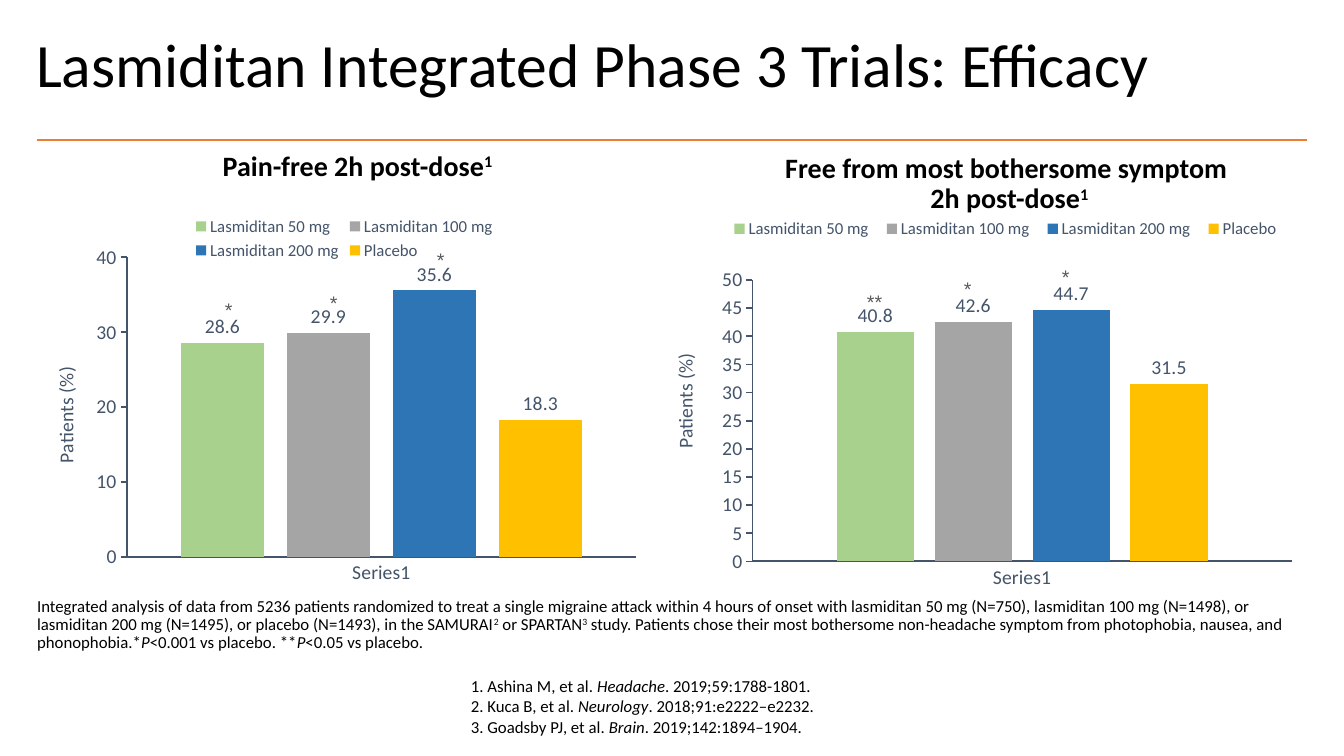
from lxml import etree
from pptx import Presentation
from pptx.chart.data import CategoryChartData
from pptx.dml.color import RGBColor
from pptx.enum.chart import XL_CHART_TYPE, XL_LABEL_POSITION, XL_LEGEND_POSITION, XL_TICK_MARK
from pptx.enum.shapes import MSO_CONNECTOR
from pptx.enum.text import MSO_ANCHOR, MSO_AUTO_SIZE, PP_ALIGN
from pptx.oxml.ns import qn
from pptx.util import Pt

PX = 914400 / 100.8
COLUMNS = XL_CHART_TYPE.COLUMN_CLUSTERED
OUTSIDE_END = XL_LABEL_POSITION.OUTSIDE_END
LEGEND_TOP = XL_LEGEND_POSITION.TOP
TICK_NONE, TICK_OUT = XL_TICK_MARK.NONE, XL_TICK_MARK.OUTSIDE
STRAIGHT = MSO_CONNECTOR.STRAIGHT
TOP, MIDDLE, BOTTOM = MSO_ANCHOR.TOP, MSO_ANCHOR.MIDDLE, MSO_ANCHOR.BOTTOM
LEFT, CENTER = PP_ALIGN.LEFT, PP_ALIGN.CENTER
NO_AUTOFIT = MSO_AUTO_SIZE.NONE

BLACK = RGBColor(0x00, 0x00, 0x00)
SLATE = RGBColor(0x44, 0x54, 0x6A)
STAR_GRAY = RGBColor(0x58, 0x59, 0x5B)
ORANGE = RGBColor(0xED, 0x7D, 0x31)
GREEN = RGBColor(0xA9, 0xD1, 0x8E)
GRAY = RGBColor(0xA5, 0xA5, 0xA5)
BLUE = RGBColor(0x2E, 0x75, 0xB6)
GOLD = RGBColor(0xFF, 0xC0, 0x00)

ARMS = [("Lasmiditan 50 mg", GREEN), ("Lasmiditan 100 mg", GRAY),
        ("Lasmiditan 200 mg", BLUE), ("Placebo", GOLD)]
PAIN_FREE = [28.6, 29.9, 35.6, 18.3]
SYMPTOM_FREE = [40.8, 42.6, 44.7, 31.5]
STARS = [("*", 215, 293), ("*", 320, 286), ("*", 427, 243),
         ("**", 857, 285), ("*", 954, 272), ("*", 1052, 260)]
PAIN_HEADING = [["Pain-free 2h post-dose", ("1", "sup")]]
SYMPTOM_HEADING = [["Free from most bothersome symptom ", "\n",
                    "2h post-dose", ("1", "sup")]]
STUDY_NOTE = [[
    "Integrated analysis of data from 5236 patients randomized to treat a single migraine "
    "attack within 4 hours of onset with lasmiditan 50 mg (N=750), lasmiditan 100 mg "
    "(N=1498), or lasmiditan 200 mg (N=1495), or placebo (N=1493), in the SAMURAI",
    ("2", "sup"), " or SPARTAN", ("3", "sup"),
    " study. Patients chose their most bothersome non-headache symptom from photophobia, "
    "nausea, and phonophobia.*", ("P", "italic"), "<0.001 vs placebo. **",
    ("P", "italic"), "<0.05 vs placebo."]]
REFERENCES = [
    ["1. Ashina M, et al. ", ("Headache", "italic"), ". 2019;59:1788-1801."],
    ["2. Kuca B, et al. ", ("Neurology", "italic"), ". 2018;91:e2222–e2232."],
    ["3. Goadsby PJ, et al. ", ("Brain", "italic"), ". 2019;142:1894–1904."],
]


def px(*lengths):
    """Turn pixel lengths into EMU."""
    return [round(length * PX) for length in lengths]


def set_font(font, size, color, name="Calibri", bold=False):
    """Apply size, colour, typeface and weight to a font."""
    font.size, font.name, font.bold = Pt(size), name, bold
    font.color.rgb = color


def write_text(frame, paragraphs, *, size, color=BLACK, font="Calibri", bold=False,
               align=LEFT, anchor=TOP, spacing=1.0):
    """Write paragraphs of plain, superscript and italic runs into a frame."""
    frame.word_wrap, frame.auto_size = True, NO_AUTOFIT
    frame.vertical_anchor = anchor
    for number, pieces in enumerate(paragraphs):
        paragraph = frame.add_paragraph() if number else frame.paragraphs[0]
        paragraph.alignment, paragraph.line_spacing = align, spacing
        paragraph.space_before = Pt(0)
        for piece in pieces:
            if piece == "\n":
                paragraph.add_line_break()
                continue
            words, style = (piece, "") if isinstance(piece, str) else piece
            run = paragraph.add_run()
            run.text = words
            set_font(run.font, size, color, font, bold)
            run.font.italic = style == "italic"
            if style == "sup":
                run.font._element.set("baseline", "30000")


def fill_placeholder(placeholder, box, paragraphs, **text_format):
    """Move a placeholder, write its text and drop its bullets."""
    placeholder.left, placeholder.top, placeholder.width, placeholder.height = px(*box)
    for paragraph in placeholder.text_frame.paragraphs:
        properties = paragraph._p.get_or_add_pPr()
        properties.set("marL", "0")
        properties.set("indent", "0")
        etree.SubElement(properties, qn("a:buNone"))
    write_text(placeholder.text_frame, paragraphs, **text_format)


def add_label(slide, box, paragraphs, rotation=0, **text_format):
    """Add a text box, optionally rotated."""
    label = slide.shapes.add_textbox(*px(*box))
    label.rotation = rotation
    write_text(label.text_frame, paragraphs, **text_format)


def add_rule(slide, start, end):
    """Add the thin orange line below the title."""
    rule = slide.shapes.add_connector(STRAIGHT, *px(*start, *end))
    rule.line.color.rgb, rule.line.width = ORANGE, Pt(1)
    etree.SubElement(rule._element.spPr, qn("a:effectLst"))


def set_layout(parent, index, fractions, inner=False):
    """Place a chart part by fractions of the chart area."""
    for old in parent.findall(qn("c:layout")):
        parent.remove(old)
    layout = etree.Element(qn("c:layout"))
    manual = etree.SubElement(layout, qn("c:manualLayout"))
    settings = [("layoutTarget", "inner")] if inner else []
    settings += [("xMode", "edge"), ("yMode", "edge")]
    settings += zip("xywh", fractions)
    for tag, value in settings:
        etree.SubElement(manual, qn(f"c:{tag}")).set("val", str(value))
    parent.insert(index, layout)


def style_axis(axis, tick, width):
    """Give an axis its line, tick marks and label font."""
    axis.has_major_gridlines = False
    axis.major_tick_mark, axis.minor_tick_mark = tick, TICK_NONE
    axis.format.line.color.rgb, axis.format.line.width = SLATE, Pt(width)
    set_font(axis.tick_labels.font, 14, SLATE)


def add_efficacy_chart(slide, box, rates, *, top, step, gap, plot, axis_width):
    """Add a column chart with one series per treatment arm."""
    data = CategoryChartData(number_format="General")
    data.categories = ["Series1"]
    for (arm, _), rate in zip(ARMS, rates):
        data.add_series(arm, [rate])
    chart = slide.shapes.add_chart(COLUMNS, *px(*box), data).chart
    chart.has_title = False
    set_font(chart.font, 14, SLATE)
    chart.has_legend = True
    chart.legend.position, chart.legend.include_in_layout = LEGEND_TOP, False
    set_font(chart.legend.font, 12, SLATE)
    style_axis(chart.category_axis, TICK_NONE, 1.5)
    style_axis(chart.value_axis, TICK_OUT, axis_width)
    chart.value_axis.minimum_scale, chart.value_axis.maximum_scale = 0, top
    chart.value_axis.major_unit = step
    columns = chart.plots[0]
    columns.gap_width, columns.overlap, columns.vary_by_categories = gap, -27, False
    for series, (_, color) in zip(columns.series, ARMS):
        series.format.fill.solid()
        series.format.fill.fore_color.rgb = color
        labels = series.data_labels
        labels.show_value, labels.position = True, OUTSIDE_END
        set_font(labels.font, 14, SLATE)
    set_layout(chart._chartSpace.chart.plotArea, 0, plot, inner=True)
    return chart


def add_axis_title(chart, words):
    """Title the value axis with upright-rotated text."""
    frame = chart.value_axis.axis_title.text_frame
    frame.text = words
    set_font(frame.paragraphs[0].runs[0].font, 14, SLATE)
    frame._txBody.bodyPr.set("rot", "-5400000")


def main():
    """Build the efficacy slide and save it."""
    deck = Presentation()
    deck.slide_width, deck.slide_height = px(1344, 756)
    slide = deck.slides.add_slide(deck.slide_layouts[4])
    title, pain, note, symptom, spare = slide.placeholders
    spare._element.getparent().remove(spare._element)

    add_rule(slide, (37, 140), (1307, 140))
    fill_placeholder(title, (26, -5, 1159, 146),
                     [["Lasmiditan Integrated Phase 3 Trials: Efficacy"]],
                     size=44, anchor=MIDDLE, spacing=0.9)
    heading = dict(size=20, bold=True, align=CENTER, spacing=0.9)
    fill_placeholder(pain, (53, 147, 609, 52), PAIN_HEADING, **heading)
    fill_placeholder(symptom, (711, 149, 597, 73), SYMPTOM_HEADING, **heading)
    fill_placeholder(note, (27, 570, 1281, 87), STUDY_NOTE,
                     size=12, anchor=BOTTOM, spacing=0.9)

    pain_chart = add_efficacy_chart(
        slide, (46, 205, 597, 406), PAIN_FREE, top=40, step=10, gap=130,
        plot=(0.135, 0.129, 0.854, 0.738), axis_width=1.5)
    add_axis_title(pain_chart, "Patients (%)")
    symptom_chart = add_efficacy_chart(
        slide, (710, 203, 597, 397), SYMPTOM_FREE, top=50, step=5, gap=219,
        plot=(0.071, 0.194, 0.904, 0.709), axis_width=1.25)
    set_layout(symptom_chart.legend._element, 1, (0.02, 0.03, 0.95, 0.07))
    add_label(slide, (621, 384, 128, 34), [["Patients (%)"]], rotation=270,
              size=14, color=SLATE, align=CENTER)

    for star, left, top in STARS:
        add_label(slide, (left, top, 20 + 8 * len(star), 34), [[star]],
                  size=14, color=STAR_GRAY, font="Arial")
    add_label(slide, (461, 671, 790, 72), REFERENCES, size=12)
    deck.save("out.pptx")


if __name__ == "__main__":
    main()
